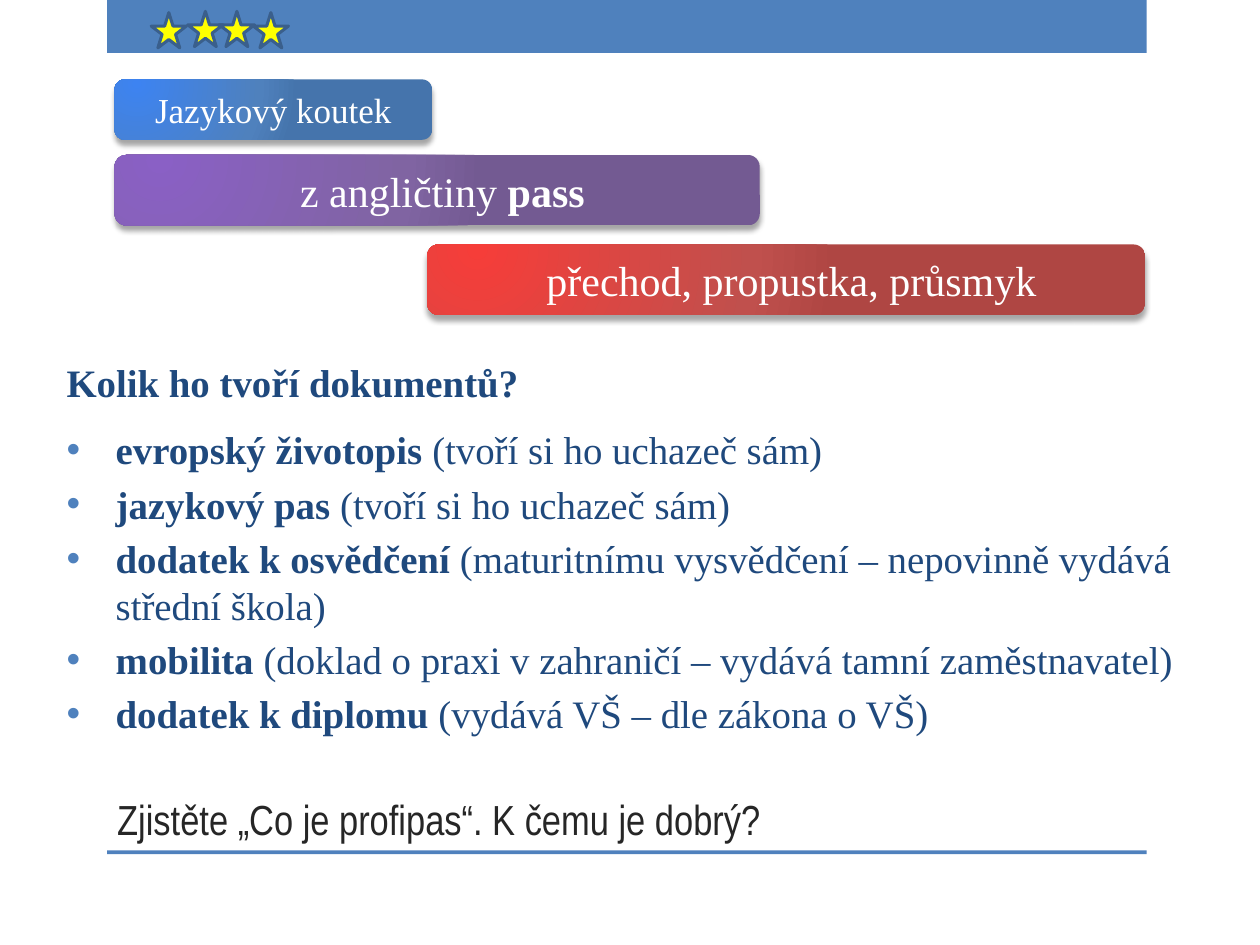
import pptx
import pptx.util
import pptx.dml.color
import pptx.enum.shapes
import pptx.enum.text
import pptx.oxml
import pptx.oxml.ns
from dataclasses import dataclass
from pptx.util import Inches

ALIGN = pptx.enum.text.PP_ALIGN
ANCHOR = pptx.enum.text.MSO_ANCHOR
SHAPE = pptx.enum.shapes.MSO_SHAPE
XMLNS = pptx.oxml.ns.nsdecls("a")


@dataclass(frozen=True)
class Theme:
    serif: str = "Times New Roman"
    narrow: str = "Arial Narrow"
    accent: str = "4F81BD"
    body: str = "1F497D"
    heading: str = "262626"
    white: str = "FFFFFF"
    star: str = "FFFF00"
    star_line: str = "3A5F8C"
    blue: tuple = ("3D83F1", "4F81BD", "4574AC")
    purple: tuple = ("8A60C5", "8064A2", "735A92")
    red: tuple = ("F63D39", "C0504D", "AF4643")
    large: float = 24
    body_size: float = 22.2
    small: float = 20


def rgb(value):
    return pptx.dml.color.RGBColor.from_string(value)


def write(paragraph, text, *, font, size, color, bold=False):
    run = paragraph.add_run()
    run.text = text
    run.font.name = font
    run.font.size = pptx.util.Pt(size)
    run.font.color.rgb = rgb(color)
    run.font.bold = bold


class SlideBuilder:
    def __init__(self, slide, theme):
        self.slide = slide
        self.theme = theme

    def shape(self, kind, left, top, width, height, fill):
        shape = self.slide.shapes.add_shape(
            kind, Inches(left), Inches(top), Inches(width), Inches(height))
        shape.shadow.inherit = False
        shape.fill.solid()
        shape.fill.fore_color.rgb = rgb(fill)
        shape.line.fill.background()
        return shape

    def bar(self, top, height):
        self.shape(SHAPE.RECTANGLE, 0.85, top, 8.25, height, self.theme.accent)

    def star(self, left, top):
        star = self.shape(SHAPE.STAR_5_POINT, left, top, 0.28, 0.28, self.theme.star)
        star.line.color.rgb = rgb(self.theme.star_line)
        star.line.width = pptx.util.Pt(1.75)

    def banner(self, left, top, width, height, colors, size, *runs):
        """Add a rounded label with a radial gradient, a soft shadow and (text, bold) runs."""
        banner = self.shape(SHAPE.ROUNDED_RECTANGLE, left, top, width, height, colors[1])
        stops = "".join(
            f'<a:gs pos="{position}"><a:srgbClr val="{color}"/></a:gs>'
            for position, color in zip((0, 76000, 100000), colors))
        gradient = pptx.oxml.parse_xml(
            f'<a:gradFill {XMLNS} rotWithShape="1"><a:gsLst>{stops}</a:gsLst>'
            '<a:path path="circle"><a:fillToRect l="15000" t="15000" r="100000" b="100000"/>'
            '</a:path></a:gradFill>')
        properties = banner._element.spPr
        properties.replace(properties.find(pptx.oxml.ns.qn("a:solidFill")), gradient)
        blur = pptx.util.Pt(3)
        properties.find(pptx.oxml.ns.qn("a:effectLst")).append(pptx.oxml.parse_xml(
            f'<a:outerShdw {XMLNS} blurRad="{blur}" dist="{blur}" dir="5400000" rotWithShape="0">'
            '<a:srgbClr val="000000"><a:alpha val="35000"/></a:srgbClr></a:outerShdw>'))
        frame = banner.text_frame
        frame.word_wrap = True
        frame.vertical_anchor = ANCHOR.MIDDLE
        paragraph = frame.paragraphs[0]
        paragraph.alignment = ALIGN.CENTER
        for text, bold in runs:
            write(paragraph, text, font=self.theme.serif, size=size,
                  color=self.theme.white, bold=bold)

    def title(self, text):
        title = self.slide.shapes.title
        title.left, title.top = Inches(0.83), Inches(6.11)
        title.width, title.height = Inches(8.26), Inches(0.64)
        frame = title.text_frame
        frame.vertical_anchor = ANCHOR.BOTTOM
        frame.paragraphs[0].alignment = ALIGN.LEFT
        write(frame.paragraphs[0], text, font=self.theme.narrow,
              size=self.theme.large, color=self.theme.heading)

    def bullet(self, paragraph):
        properties = paragraph._p.get_or_add_pPr()
        properties.set("marL", str(Inches(0.39)))
        properties.set("indent", str(-Inches(0.39)))
        for xml in (f'<a:buClr {XMLNS}><a:srgbClr val="{self.theme.accent}"/></a:buClr>',
                    f'<a:buFont {XMLNS} typeface="Arial"/>',
                    f'<a:buChar {XMLNS} char="•"/>'):
            properties.append(pptx.oxml.parse_xml(xml))

    def document_list(self, question, documents):
        box = self.slide.shapes.add_textbox(
            Inches(0.43), Inches(2.73), Inches(9.57), Inches(3.23))
        frame = box.text_frame
        frame.word_wrap = True
        frame.vertical_anchor = ANCHOR.MIDDLE
        style = dict(font=self.theme.serif, size=self.theme.body_size, color=self.theme.body)
        write(frame.paragraphs[0], question, bold=True, **style)
        for index, (document, note) in enumerate(documents):
            paragraph = frame.add_paragraph()
            paragraph.space_before = pptx.util.Pt(4.4 if index else 12)
            self.bullet(paragraph)
            write(paragraph, document + " ", bold=True, **style)
            write(paragraph, note, **style)


def main():
    presentation = pptx.Presentation()
    presentation.slide_width, presentation.slide_height = Inches(10), Inches(7.5)
    theme = Theme()
    builder = SlideBuilder(
        presentation.slides.add_slide(presentation.slide_layouts[5]), theme)

    builder.bar(0, 0.42)
    builder.bar(6.75, 0.03)
    builder.title("Zjistěte „Co je profipas“. K čemu je dobrý?")
    builder.document_list("Kolik ho tvoří dokumentů?", [
        ("evropský životopis", "(tvoří si ho uchazeč sám)"),
        ("jazykový pas", "(tvoří si ho uchazeč sám)"),
        ("dodatek k osvědčení",
         "(maturitnímu vysvědčení – nepovinně vydává střední škola)"),
        ("mobilita", "(doklad o praxi v zahraničí – vydává tamní zaměstnavatel)"),
        ("dodatek k diplomu", "(vydává VŠ – dle zákona o VŠ)"),
    ])
    for left, top in ((1.2, 0.1), (1.49, 0.09), (1.74, 0.09), (2.01, 0.1)):
        builder.star(left, top)
    builder.banner(0.91, 0.63, 2.52, 0.48, theme.blue, theme.small,
                   ("Jazykový koutek", False))
    builder.banner(0.91, 1.23, 5.12, 0.56, theme.purple, theme.large,
                   (" z angličtiny ", False), ("pass", True))
    builder.banner(3.39, 1.94, 5.7, 0.56, theme.red, theme.large,
                   (" přechod, propustka, průsmyk", False))
    presentation.save("out.pptx")


if __name__ == "__main__":
    main()
